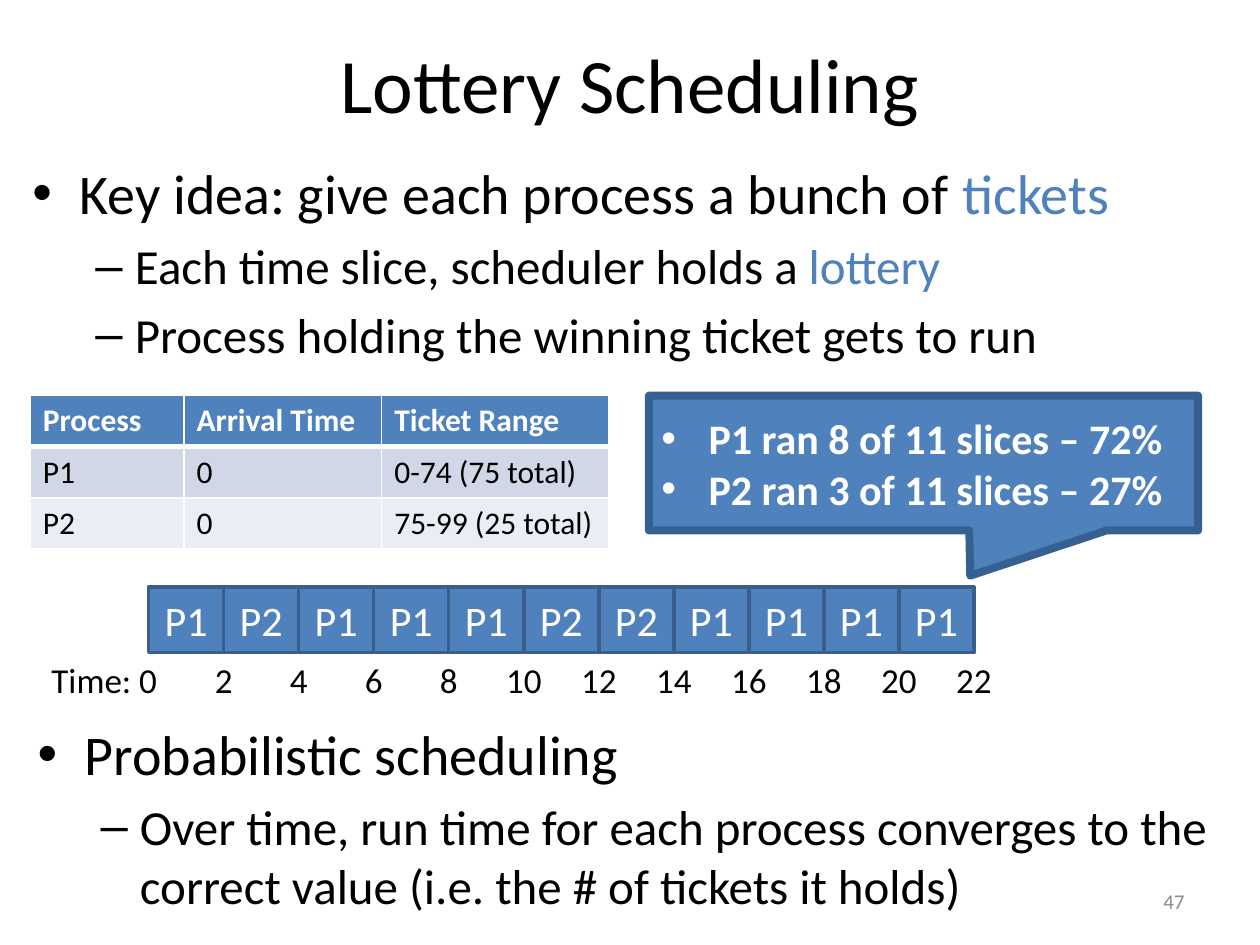
from lxml.etree import SubElement
from pptx import Presentation
from pptx.dml.color import RGBColor
from pptx.enum.shapes import MSO_SHAPE
from pptx.enum.text import MSO_ANCHOR, PP_ALIGN
from pptx.oxml.ns import qn
from pptx.util import Inches, Pt

FONT = "Calibri"
BLACK = RGBColor(0x00, 0x00, 0x00)
WHITE = RGBColor(0xFF, 0xFF, 0xFF)
GREY = RGBColor(0x8C, 0x8C, 0x8C)
BLUE = RGBColor(0x4F, 0x81, 0xBD)
SLICE_EDGE = RGBColor(0x3A, 0x5F, 0x8C)
CALLOUT_EDGE = RGBColor(0x37, 0x60, 0x92)
ROW_FILLS = [BLUE, RGBColor(0xD0, 0xD8, 0xE8), RGBColor(0xE9, 0xED, 0xF4)]

# The slide is a grid of 100 columns by 75 rows of square units
WIDTH, HEIGHT = Inches(10), Inches(7.5)
UNIT = WIDTH // 100

# Timeline: equal slices between two edges, each lasting two time units
SLICES = ["P1", "P2", "P1", "P1", "P1", "P2", "P2", "P1", "P1", "P1", "P1"]
SLICE_TIME = 2
STRIP_LEFT, STRIP_TOP, STRIP_WIDTH, STRIP_HEIGHT = 11.8, 46.6, 65.5, 5.2
STEP = STRIP_WIDTH / len(SLICES)

# Bullet levels: symbol, size, left indent and hanging indent in units
LEVELS = [("•", 32, 3.75, 3.75), ("–", 28, 8.13, 3.13)]

TICKETS = [
    ["Process", "Arrival Time", "Ticket Range"],
    ["P1", "0", "0-74 (75 total)"],
    ["P2", "0", "75-99 (25 total)"],
]
TABLE_COLUMNS = [12.2, 15.7, 18]
TABLE_ROW = 4.06


def units(*counts):
    return [round(count * UNIT) for count in counts]


def add_span(para, text, size, color, bold=False):
    span = para.add_run()
    span.text = text
    span.font.name = FONT
    span.font.size = Pt(size)
    span.font.bold = bold
    span.font.color.rgb = color


def add_bullet(para, symbol, left, hanging, space_percent=0):
    properties = para._p.get_or_add_pPr()
    margin, indent = units(left, hanging)
    properties.set("marL", str(margin))
    properties.set("indent", str(-indent))
    spacing = SubElement(properties, qn("a:spcBef"))
    SubElement(spacing, qn("a:spcPct"), val=str(space_percent * 1000))
    SubElement(properties, qn("a:buFont"), typeface="Arial")
    SubElement(properties, qn("a:buChar"), char=symbol)


def add_text(page, place, text, size, color=BLACK, align=PP_ALIGN.LEFT,
             anchor=MSO_ANCHOR.TOP, wrap=True):
    frame = page.shapes.add_textbox(*units(*place)).text_frame
    frame.word_wrap = wrap
    frame.vertical_anchor = anchor
    para = frame.paragraphs[0]
    para.alignment = align
    add_span(para, text, size, color)


def add_outline(page, place, items):
    """Each item is a level followed by its (text, colour) spans."""
    frame = page.shapes.add_textbox(*units(*place)).text_frame
    frame.word_wrap = True
    for index, (level, *spans) in enumerate(items):
        para = frame.add_paragraph() if index else frame.paragraphs[0]
        para.level = level
        symbol, size, left, hanging = LEVELS[level]
        add_bullet(para, symbol, left, hanging, space_percent=20)
        for text, color in spans:
            add_span(para, text, size, color)


def add_box(page, kind, place, edge, edge_width):
    box = page.shapes.add_shape(kind, *units(*place))
    box.shadow.inherit = False
    box.fill.solid()
    box.fill.fore_color.rgb = BLUE
    box.line.color.rgb = edge
    box.line.width = Pt(edge_width)
    box.text_frame.vertical_anchor = MSO_ANCHOR.MIDDLE
    return box


def add_borders(cell, top, bottom):
    properties = cell._tc.get_or_add_tcPr()
    for side, width in (("L", 1), ("R", 1), ("T", top), ("B", bottom)):
        line = SubElement(properties, qn(f"a:ln{side}"), w=str(Pt(width)))
        fill = SubElement(line, qn("a:solidFill"))
        SubElement(fill, qn("a:srgbClr"), val=str(WHITE))


def add_ticket_table(page, left, top):
    place = units(left, top, sum(TABLE_COLUMNS), TABLE_ROW * len(TICKETS))
    table = page.shapes.add_table(len(TICKETS), len(TABLE_COLUMNS), *place).table
    for column, width in zip(table.columns, units(*TABLE_COLUMNS)):
        column.width = width
    for row, texts in enumerate(TICKETS):
        header = row == 0
        for column, text in enumerate(texts):
            cell = table.cell(row, column)
            add_borders(cell, top=3 if row == 1 else 1, bottom=3 if header else 1)
            cell.fill.solid()
            cell.fill.fore_color.rgb = ROW_FILLS[row]
            add_span(cell.text_frame.paragraphs[0], text, 18,
                     WHITE if header else BLACK, bold=header)


def add_timeline(page):
    for index, process in enumerate(SLICES):
        place = (STRIP_LEFT + index * STEP, STRIP_TOP, STEP, STRIP_HEIGHT)
        box = add_box(page, MSO_SHAPE.RECTANGLE, place, SLICE_EDGE, 2)
        para = box.text_frame.paragraphs[0]
        para.alignment = PP_ALIGN.CENTER
        add_span(para, process, 24, WHITE)

    # Time labels are centred on the slice edges
    label_top = STRIP_TOP + STRIP_HEIGHT
    add_text(page, (3.1, label_top, 10.5, 4.4), "Time: 0", 20, wrap=False)
    for edge in range(1, len(SLICES) + 1):
        left = STRIP_LEFT + edge * STEP - 2.45
        add_text(page, (left, label_top, 4.9, 4.4), str(edge * SLICE_TIME), 20,
                 align=PP_ALIGN.CENTER, wrap=False)


def add_callout(page, place, lines):
    box = add_box(page, MSO_SHAPE.RECTANGULAR_CALLOUT, place, CALLOUT_EDGE, 4.5)
    box.adjustments[0] = 0.085
    box.adjustments[1] = 0.836
    frame = box.text_frame
    for index, text in enumerate(lines):
        para = frame.add_paragraph() if index else frame.paragraphs[0]
        para.alignment = PP_ALIGN.LEFT
        add_bullet(para, "•", 3.75, 3.75)
        add_span(para, text, 24, WHITE, bold=True)


def main():
    deck = Presentation()
    deck.slide_width, deck.slide_height = WIDTH, HEIGHT
    page = deck.slides.add_slide(deck.slide_layouts[6])

    # Title and key idea
    add_text(page, (5, 0.3, 90, 12.5), "Lottery Scheduling", 44,
             align=PP_ALIGN.CENTER, anchor=MSO_ANCHOR.MIDDLE)
    add_outline(page, (1.6, 12.1, 96.3, 20.2), [
        (0, ("Key idea: give each process a bunch of ", BLACK), ("tickets", BLUE)),
        (1, ("Each time slice, scheduler holds a ", BLACK), ("lottery", BLUE)),
        (1, ("Process holding the winning ticket gets to run", BLACK)),
    ])

    # Conclusion and page number
    add_text(page, (71.7, 69.5, 23.3, 4), "47", 12, GREY,
             align=PP_ALIGN.RIGHT, anchor=MSO_ANCHOR.MIDDLE)
    add_outline(page, (2, 56.6, 96.3, 18.4), [
        (0, ("Probabilistic scheduling", BLACK)),
        (1, ("Over time, run time for each process converges to the "
             "correct value (i.e. the # of tickets it holds)", BLACK)),
    ])

    # Worked example
    add_ticket_table(page, 2.4, 31.4)
    add_timeline(page)
    add_callout(page, (51.5, 31.4, 43.6, 10.7), [
        "P1 ran 8 of 11 slices – 72%",
        "P2 ran 3 of 11 slices – 27%",
    ])

    deck.save("out.pptx")


if __name__ == "__main__":
    main()
